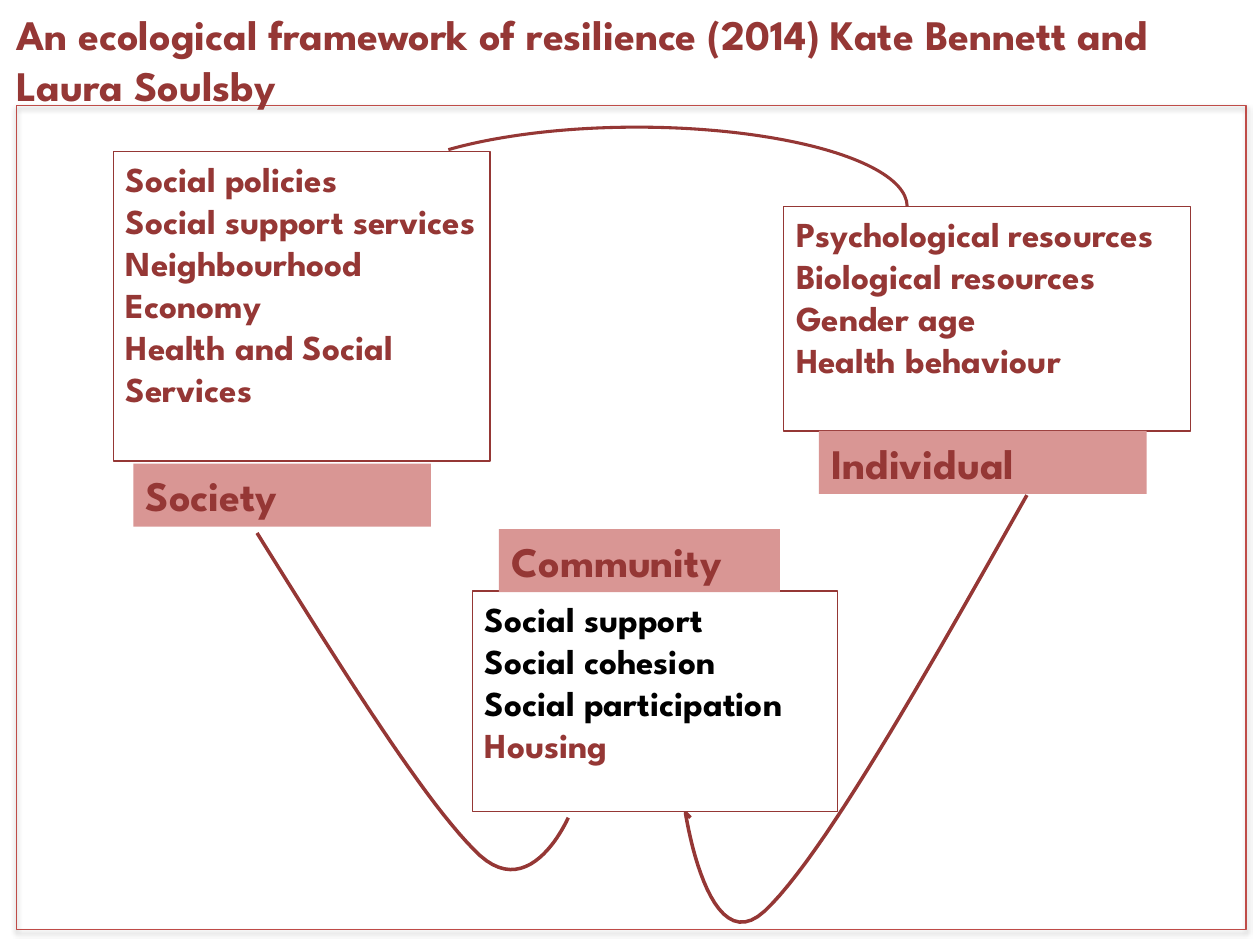
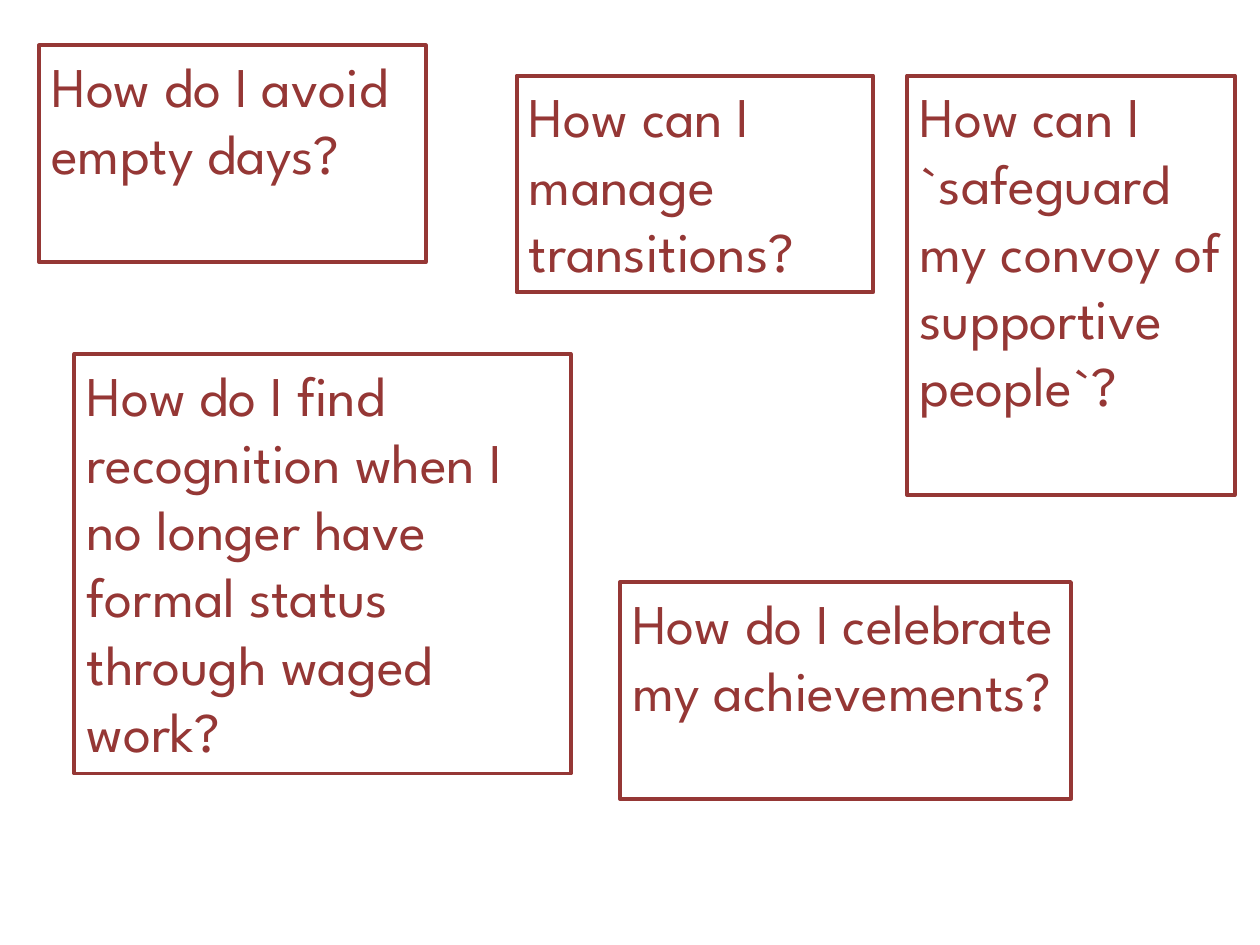
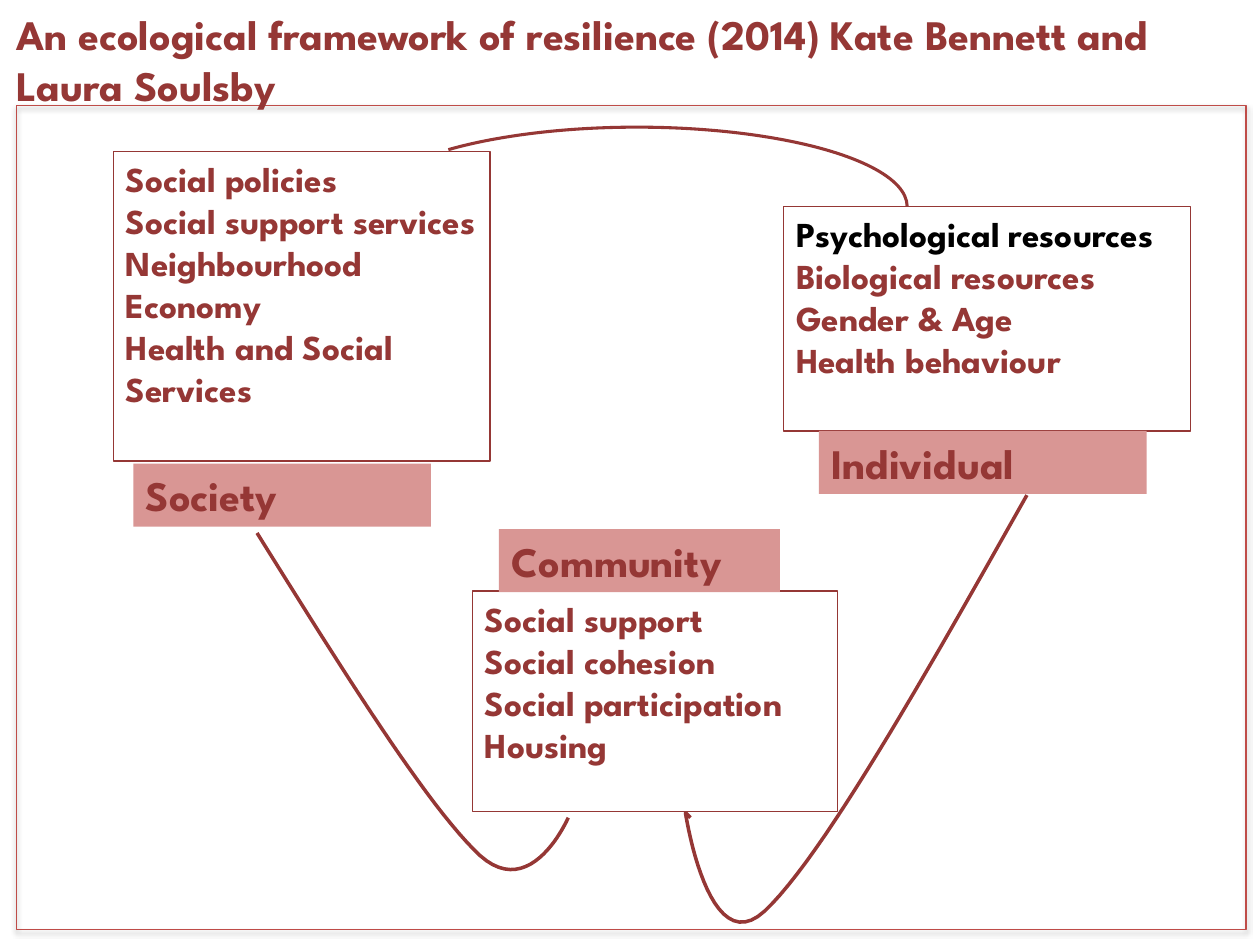
from collections import namedtuple

from lxml import etree
from pptx import Presentation
from pptx.dml.color import RGBColor
from pptx.enum.shapes import MSO_SHAPE as Preset
from pptx.enum.text import MSO_ANCHOR as Anchor, PP_ALIGN as Align
from pptx.oxml.ns import qn
from pptx.util import Emu, Inches, Pt

# Grid: 100 columns by 75 rows of square cells
CELL = Inches(0.1)
COLUMNS, ROWS = 100, 75
FONT = "League Spartan"
DARK_RED, FRAME_RED, PINK, BLACK = "953735", "BF4C48", "D99694", "000000"
TITLE = "An ecological framework of resilience (2014) Kate Bennett and Laura Soulsby"

Box = namedtuple("Box", "left top width height")
Level = namedtuple("Level", "name lines list_box label_box")

SLIDE_BOX = Box(0, 0, COLUMNS, ROWS)
TITLE_BOX = Box(0.3, 0.2, 98.7, 9.1)
FRAME_BOX = Box(1.3, 8.4, 97.6, 65.4)

# List boxes are relative to the frame, label boxes to their list
SOCIETY = Level("Society",
                ["Social policies", "Social support services", "Neighbourhood",
                 "Economy", "Health and Social Services"],
                Box(7.7, 3.6, 29.9, 24.6), Box(1.6, 24.8, 23.6, 5))
COMMUNITY = Level("Community",
                  ["Social support", "Social cohesion", "Social participation", "Housing"],
                  Box(36.2, 38.5, 29, 17.5), Box(2.1, -4.9, 22.3, 5))
INDIVIDUAL = Level("Individual",
                   ["Psychological resources", "Biological resources",
                    "Gender age", "Health behaviour"],
                   Box(60.9, 8, 32.3, 17.8), Box(2.8, 17.8, 26, 5))

# Links between levels, relative to the frame
SOCIETY_INDIVIDUAL_ARC = Box(27.8, 1.7, 42.9, 12.6)
ARC_START = 118.07
SOCIETY_COMMUNITY = [(19.1, 33.9), (25.9, 44.8), (32.7, 55.7), (36.8, 59.5),
                     (40.9, 63.2), (43.8, 56.5), (43.8, 56.5)]
INDIVIDUAL_COMMUNITY = [(80.2, 30.9), (72.1, 45.3), (63.9, 59.7), (59.4, 63.9),
                        (54.9, 68.1), (53.1, 56.1), (53.1, 56.1)]
COMMUNITY_TICK = [(53.5, 56.5)]

QUESTIONS = [
    ("How do I avoid empty days?", Box(3.1, 3.6, 30.7, 17.2)),
    ("How do I find recognition when I no longer have formal status through waged work?",
     Box(5.9, 28.1, 39.4, 33.3)),
    ("How can I manage transitions?", Box(41, 6, 28.3, 17.2)),
    ("How can I `safeguard my convoy of supportive people`?", Box(72, 6, 26, 33.3)),
    ("How do I celebrate my achievements?", Box(49.2, 46.2, 35.8, 17.2)),
]


def color(hex_string):
    return RGBColor.from_string(hex_string)


def cells(*lengths):
    return [Emu(round(length * CELL)) for length in lengths]


def inside(outer, box):
    return box._replace(left=outer.left + box.left, top=outer.top + box.top)


def style(shape, fill=None, line=None, width=0.75):
    shape.shadow.inherit = False
    if fill:
        shape.fill.solid()
        shape.fill.fore_color.rgb = color(fill)
    else:
        shape.fill.background()
    if line:
        shape.line.color.rgb = color(line)
        shape.line.width = Pt(width)
    else:
        shape.line.fill.background()
    return shape


def add_preset(slide, preset, box, **look):
    return style(slide.shapes.add_shape(preset, *cells(*box)), **look)


def write(shape, lines, size, bold=True, black_lines=()):
    frame = shape.text_frame
    frame.word_wrap = True
    frame.vertical_anchor = Anchor.TOP
    frame.text = "\n".join(lines)
    for paragraph in frame.paragraphs:
        paragraph.alignment = Align.LEFT
        font = paragraph.font
        font.name, font.size, font.bold = FONT, Pt(size), bold
        font.color.rgb = color(BLACK if paragraph.text in black_lines else DARK_RED)


def add_drop_shadow(shape):
    effects = shape._element.spPr.find(qn("a:effectLst"))
    shadow = etree.SubElement(effects, qn("a:outerShdw"), blurRad="40000",
                              dist="20000", dir="5400000", rotWithShape="0")
    shadow_color = etree.SubElement(shadow, qn("a:srgbClr"), val=BLACK)
    etree.SubElement(shadow_color, qn("a:alpha"), val="38000")


def bezier_points(controls, steps=24):
    """Points along a chain of cubic curves that share their end points."""
    points = [controls[0]]
    for first in range(0, len(controls) - 1, 3):
        curve = controls[first:first + 4]
        for step in range(1, steps + 1):
            t = step / steps
            weights = ((1 - t) ** 3, 3 * t * (1 - t) ** 2, 3 * t ** 2 * (1 - t), t ** 3)
            points.append(tuple(sum(w * point[axis] for w, point in zip(weights, curve))
                                for axis in (0, 1)))
    return points


def add_link(slide, box, points):
    start, *rest = [cells(box.left + x, box.top + y) for x, y in points]
    builder = slide.shapes.build_freeform(*start)
    builder.add_line_segments(rest, close=False)
    style(builder.convert_to_shape(), line=DARK_RED, width=2)


def add_level(slide, box, level, black_lines):
    list_box = inside(box, level.list_box)
    factors = add_preset(slide, Preset.RECTANGLE, list_box, line=DARK_RED)
    write(factors, level.lines, 20, black_lines=black_lines)
    label = add_preset(slide, Preset.RECTANGLE, inside(list_box, level.label_box), fill=PINK)
    write(label, [level.name], 24)


def add_framework(slide, box, levels, black_lines):
    # Frame
    add_drop_shadow(add_preset(slide, Preset.RECTANGLE, box, line=FRAME_RED))
    # Levels
    for level in levels:
        add_level(slide, box, level, black_lines)
    # Links
    arc = add_preset(slide, Preset.ARC, inside(box, SOCIETY_INDIVIDUAL_ARC),
                     line=DARK_RED, width=1.75)
    arc.adjustments[0], arc.adjustments[1] = ARC_START, 0
    add_link(slide, box, bezier_points(SOCIETY_COMMUNITY))
    add_link(slide, box, bezier_points(INDIVIDUAL_COMMUNITY) + COMMUNITY_TICK)


def add_title(slide, box):
    write(slide.shapes.add_textbox(*cells(*box)), [TITLE], 24)


def add_questions(slide, box):
    for question, place in QUESTIONS:
        panel = add_preset(slide, Preset.RECTANGLE, inside(box, place),
                           line=DARK_RED, width=2.25)
        write(panel, [question], 32, bold=False)


def add_blank_slide(presentation):
    return presentation.slides.add_slide(presentation.slide_layouts[6])


def add_framework_slide(presentation, levels, black_lines):
    slide = add_blank_slide(presentation)
    add_framework(slide, FRAME_BOX, levels, black_lines)
    add_title(slide, TITLE_BOX)


def main():
    presentation = Presentation()
    presentation.slide_width, presentation.slide_height = cells(COLUMNS, ROWS)

    add_framework_slide(presentation, [SOCIETY, COMMUNITY, INDIVIDUAL],
                        black_lines=COMMUNITY.lines[:3])
    add_questions(add_blank_slide(presentation), SLIDE_BOX)
    individual = INDIVIDUAL._replace(
        lines=[line.replace("Gender age", "Gender & Age") for line in INDIVIDUAL.lines])
    add_framework_slide(presentation, [SOCIETY, COMMUNITY, individual],
                        black_lines=individual.lines[:1])

    presentation.save("out.pptx")


if __name__ == "__main__":
    main()
